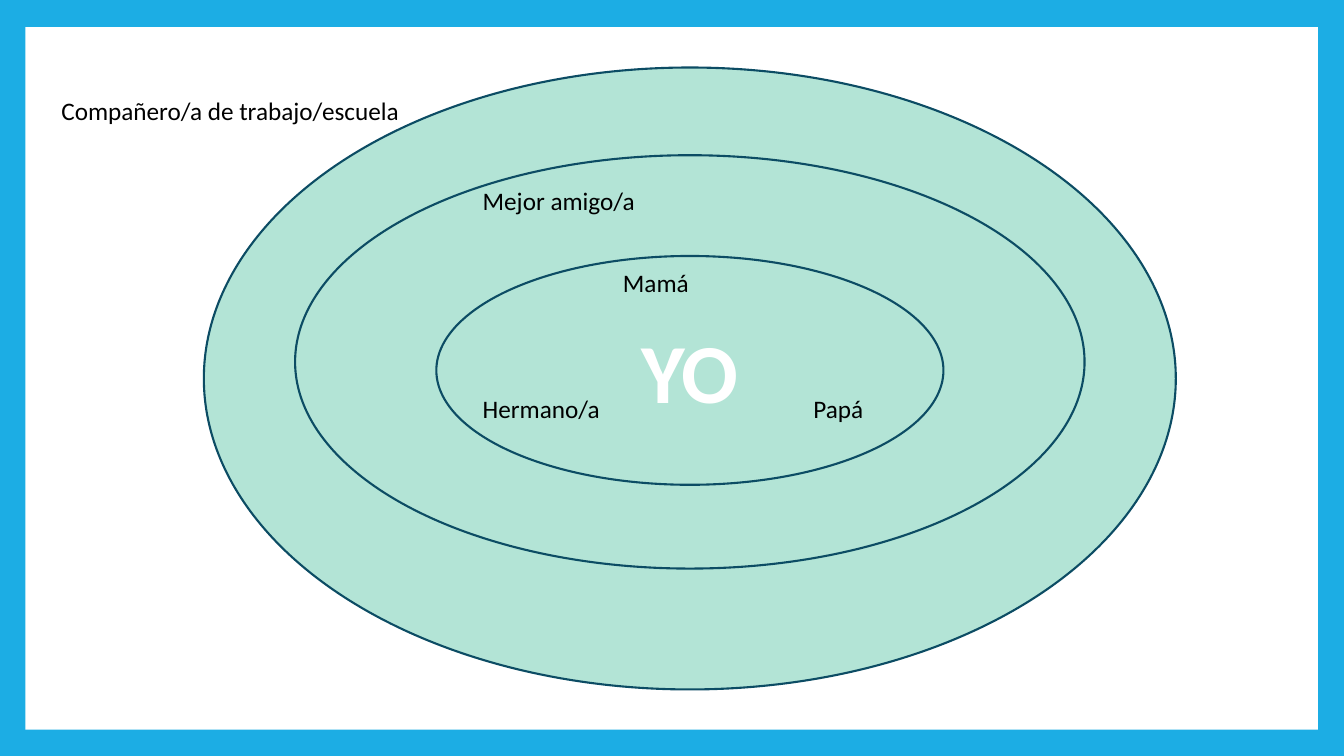
"""Draw the circles of closeness around a person."""
from dataclasses import dataclass

from pptx import Presentation
from pptx.dml.color import RGBColor
from pptx.enum.shapes import MSO_SHAPE
from pptx.enum.text import MSO_ANCHOR, MSO_AUTO_SIZE, PP_ALIGN
from pptx.shapes.autoshape import Shape
from pptx.slide import Slide
from pptx.text.text import TextFrame
from pptx.util import Inches, Pt

RECTANGLE, OVAL = MSO_SHAPE.RECTANGLE, MSO_SHAPE.OVAL
MIDDLE, CENTER, LEFT = MSO_ANCHOR.MIDDLE, PP_ALIGN.CENTER, PP_ALIGN.LEFT
GROW = MSO_AUTO_SIZE.SHAPE_TO_FIT_TEXT
SLIDE_WIDTH, SLIDE_HEIGHT = Inches(13.33), Inches(7.5)
BLANK_LAYOUT = 6


@dataclass(frozen=True)
class Theme:
    """Colours, font and sizes of the slide."""
    frame: RGBColor = RGBColor(0x1C, 0xAD, 0xE4)
    white: RGBColor = RGBColor(0xFF, 0xFF, 0xFF)
    ring: RGBColor = RGBColor(0xB3, 0xE4, 0xD6)
    outline: RGBColor = RGBColor(0x0C, 0x4C, 0x64)
    ink: RGBColor = RGBColor(0x00, 0x00, 0x00)
    font: str = "Calibri"
    self_size: Pt = Pt(60)
    person_size: Pt = Pt(18)
    outline_width: Pt = Pt(1.5)


@dataclass(frozen=True)
class Box:
    """An area in percent of the slide's width and height."""
    left: float
    top: float
    width: float
    height: float

    def emu(self) -> tuple[int, int, int, int]:
        """Return the area in slide units."""
        return (round(self.left * SLIDE_WIDTH / 100), round(self.top * SLIDE_HEIGHT / 100),
                round(self.width * SLIDE_WIDTH / 100), round(self.height * SLIDE_HEIGHT / 100))


@dataclass(frozen=True)
class Ring:
    """One circle of closeness, in percent of the slide."""
    center_y: float
    width: float
    height: float


@dataclass(frozen=True)
class Person:
    """A person's label, in percent of the slide."""
    name: str
    left: float
    top: float
    width: float
    wrap: bool = True


THEME = Theme()
PANEL = Box(1.88, 3.6, 96.17, 92.93)
RING_CENTER_X = 51.33
PERSON_HEIGHT = 5.33
FAMILY_ROW, FRIEND_LEFT = 51.33, 35.18
RINGS = (
    Ring(50.07, 72.32, 82.27),
    Ring(47.87, 58.74, 54.67),
    Ring(49, 37.73, 30.27),
)
PEOPLE = (
    Person("Mamá", 45.61, 34.67, 14.18),
    Person("Papá", 59.79, FAMILY_ROW, 8.7),
    Person("Hermano/a", FRIEND_LEFT, FAMILY_ROW, 10.35, wrap=False),
    Person("Mejor amigo/a", FRIEND_LEFT, 23.87, 19.8),
    Person("Compañero/a de trabajo/escuela", 3.83, 12, 26.93, wrap=False),
)


def write(frame: TextFrame, text: str, size: Pt, color: RGBColor,
          align: PP_ALIGN, bold: bool = False) -> None:
    """Set one formatted line of text."""
    frame.text = text
    line = frame.paragraphs[0]
    line.alignment = align
    font = line.runs[0].font
    font.name, font.size, font.bold = THEME.font, size, bold
    font.color.rgb = color


def add_filled(slide: Slide, kind: MSO_SHAPE, area: Box, fill: RGBColor) -> Shape:
    """Add a flat shape without an outline."""
    shape = slide.shapes.add_shape(kind, *area.emu())
    shape.shadow.inherit = False
    shape.fill.solid()
    shape.fill.fore_color.rgb = fill
    shape.line.fill.background()
    return shape


def add_ring(slide: Slide, ring: Ring) -> Shape:
    """Add an outlined ellipse on the common vertical axis."""
    area = Box(RING_CENTER_X - ring.width / 2, ring.center_y - ring.height / 2,
               ring.width, ring.height)
    ellipse = add_filled(slide, OVAL, area, THEME.ring)
    ellipse.line.color.rgb = THEME.outline
    ellipse.line.width = THEME.outline_width
    return ellipse


def add_person(slide: Slide, person: Person) -> None:
    """Add a person's label."""
    area = Box(person.left, person.top, person.width, PERSON_HEIGHT)
    frame = slide.shapes.add_textbox(*area.emu()).text_frame
    frame.word_wrap = person.wrap
    frame.auto_size = GROW
    write(frame, person.name, THEME.person_size, THEME.ink, LEFT)


def main() -> None:
    """Build and save the slide."""
    deck = Presentation()
    deck.slide_width, deck.slide_height = SLIDE_WIDTH, SLIDE_HEIGHT
    slide = deck.slides.add_slide(deck.slide_layouts[BLANK_LAYOUT])
    slide.background.fill.solid()
    slide.background.fill.fore_color.rgb = THEME.frame
    add_filled(slide, RECTANGLE, PANEL, THEME.white)
    innermost = [add_ring(slide, ring) for ring in RINGS][-1]
    innermost.text_frame.vertical_anchor = MIDDLE
    write(innermost.text_frame, "YO", THEME.self_size, THEME.white, CENTER, bold=True)
    for person in PEOPLE:
        add_person(slide, person)
    deck.save("out.pptx")


if __name__ == "__main__":
    main()
